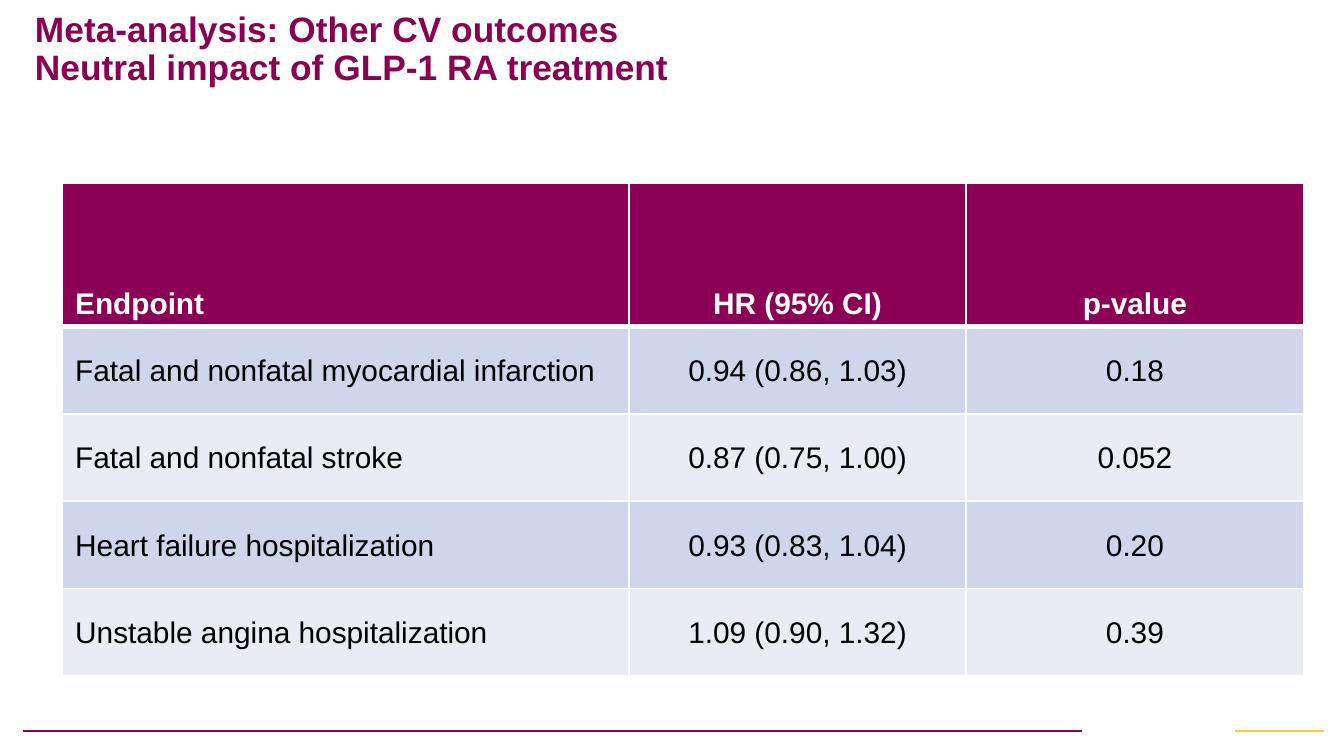
import pptx
import pptx.util
import pptx.dml.color
import pptx.enum.shapes
import pptx.enum.text
import pptx.oxml
import pptx.oxml.ns

Inches = pptx.util.Inches
Pt = pptx.util.Pt
ALIGN = pptx.enum.text.PP_ALIGN
ANCHOR = pptx.enum.text.MSO_ANCHOR

COLORS = {
    "plum": "8A0054",
    "gold": "FFCA38",
    "white": "FFFFFF",
    "black": "000000",
    "blue": "CFD5EA",
    "pale": "E9EBF5",
}

ROWS = [
    ("Endpoint", "HR (95% CI)", "p-value"),
    ("Fatal and nonfatal myocardial infarction", "0.94 (0.86, 1.03)", "0.18"),
    ("Fatal and nonfatal stroke", "0.87 (0.75, 1.00)", "0.052"),
    ("Heart failure hospitalization", "0.93 (0.83, 1.04)", "0.20"),
    ("Unstable angina hospitalization", "1.09 (0.90, 1.32)", "0.39"),
]


def get_color(name):
    return pptx.dml.color.RGBColor.from_string(COLORS[name])


def put_text(frame, text, size=16, color="black", bold=False,
             align=ALIGN.LEFT, space=1.05):
    frame.text = text
    for para in frame.paragraphs:
        para.alignment = align
        para.line_spacing = space
        for run in para.runs:
            font = run.font
            font.name = "Arial"
            font.size = Pt(size)
            font.bold = bold
            font.color.rgb = get_color(color)


def add_title(slide, text):
    title = slide.shapes.title
    title.left, title.top = Inches(0.19), Inches(0.08)
    title.width, title.height = Inches(8.62), Inches(0.59)
    frame = title.text_frame
    frame.word_wrap = True
    frame.auto_size = pptx.enum.text.MSO_AUTO_SIZE.NONE
    frame.vertical_anchor = ANCHOR.MIDDLE
    frame.margin_left = frame.margin_right = Inches(0.07)
    frame.margin_top = frame.margin_bottom = Inches(0.04)
    put_text(frame, text, size=18.9, color="plum", bold=True, space=0.9)


def add_rule(slide, start, end, color):
    y = Inches(5.44)
    rule = slide.shapes.add_connector(
        pptx.enum.shapes.MSO_CONNECTOR.STRAIGHT,
        Inches(start), y, Inches(end), y)
    rule.line.color.rgb = get_color(color)
    rule.line.width = Pt(1)
    props = rule._element.spPr
    props.append(pptx.oxml.parse_xml(
        f"<a:effectLst {pptx.oxml.ns.nsdecls('a')}/>"))


def set_edges(cell, top, bottom):
    """Draw white edges; widths are in points."""
    props = cell._tc.get_or_add_tcPr()
    edges = {"lnL": 1, "lnR": 1, "lnT": top, "lnB": bottom}
    for spot, (tag, width) in enumerate(edges.items()):
        props.insert(spot, pptx.oxml.parse_xml(
            f"<a:{tag} {pptx.oxml.ns.nsdecls('a')} w=\"{Pt(width)}\">"
            f"<a:solidFill><a:srgbClr val=\"{COLORS['white']}\"/></a:solidFill>"
            f"</a:{tag}>"))


def style_cell(cell, text, row, col):
    head = row == 0
    fill = "plum" if head else "blue" if row % 2 else "pale"
    cell.fill.solid()
    cell.fill.fore_color.rgb = get_color(fill)
    cell.vertical_anchor = ANCHOR.BOTTOM if head else ANCHOR.MIDDLE
    cell.margin_left = cell.margin_right = Inches(0.1)
    cell.margin_top = cell.margin_bottom = Inches(0.04)
    put_text(cell.text_frame, text, bold=head,
             color="white" if head else "black",
             align=ALIGN.CENTER if col else ALIGN.LEFT)
    set_edges(cell, top=3 if row == 1 else 1, bottom=3 if head else 1)


def add_grid(slide, rows):
    widths = [4.22, 2.51, 2.51]
    heights = [1.07] + [0.65] * (len(rows) - 1)
    table = slide.shapes.add_table(
        len(rows), len(widths), Inches(0.46), Inches(1.36),
        Inches(sum(widths)), Inches(sum(heights))).table
    for column, width in zip(table.columns, widths):
        column.width = Inches(width)
    for line, height in zip(table.rows, heights):
        line.height = Inches(height)
    for row, texts in enumerate(rows):
        for col, text in enumerate(texts):
            style_cell(table.cell(row, col), text, row, col)


def main():
    # Widescreen page, 16 to 9
    deck = pptx.Presentation()
    deck.slide_width = Inches(10)
    deck.slide_height = Inches(10 * 9 / 16)
    slide = deck.slides.add_slide(deck.slide_layouts[5])

    # Footer rules
    add_rule(slide, 0.17, 8.05, "plum")
    add_rule(slide, 9.19, 9.85, "gold")

    # Title and results table
    add_title(slide, "Meta-analysis: Other CV outcomes \v"
                     "Neutral impact of GLP-1 RA treatment")
    add_grid(slide, ROWS)

    deck.save("out.pptx")


if __name__ == "__main__":
    main()
